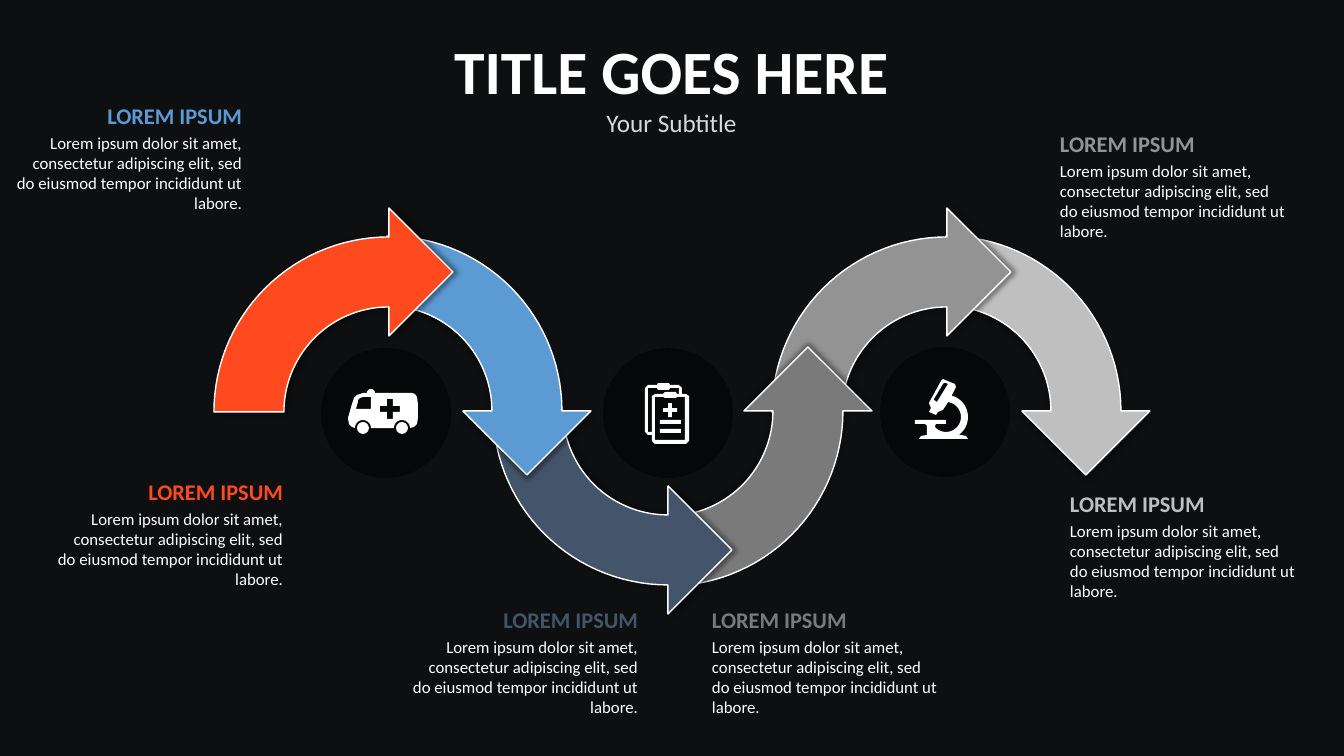
from math import cos, radians, sin

from lxml import etree
from pptx import Presentation, util as u
from pptx.dml import color
from pptx.enum import shapes, text
from pptx.oxml import ns

PX = 12192000 / 1344
BODY = ("Lorem ipsum dolor sit amet, consectetur adipiscing elit, "
        "sed do eiusmod tempor incididunt ut labore.")


def px(n):
    return u.Emu(round(n * PX))


def rgb(code):
    return color.RGBColor.from_string(code)


def arc(x, y, r, a, b, steps=30):
    turns = [radians(a + (b - a) * i / steps) for i in range(steps + 1)]
    return [(x + r * cos(t), y + r * sin(t)) for t in turns]


def cross(x, y, arm, half):
    return [(x - half, y - arm), (x + half, y - arm), (x + half, y - half),
            (x + arm, y - half), (x + arm, y + half), (x + half, y + half),
            (x + half, y + arm), (x - half, y + arm), (x - half, y + half),
            (x - arm, y + half), (x - arm, y - half), (x - half, y - half)]


class Deck:
    """Draws styled elements on the current slide."""

    font = "Calibri"
    white = "FFFFFF"
    dark = "0E0F11"

    def __init__(self):
        self.prs = Presentation()
        self.prs.slide_width, self.prs.slide_height = px(1344), px(756)
        self.page = self.prs.slides.add_slide(self.prs.slide_layouts[6])
        back = self.page.background.fill
        back.solid()
        back.fore_color.rgb = rgb(self.dark)

    def paint(self, shape, fill):
        shape.shadow.inherit = False
        shape.fill.solid()
        shape.fill.fore_color.rgb = rgb(fill)
        shape.line.fill.background()
        return shape

    def block(self, kind, x, y, w, h, fill):
        shape = self.page.shapes.add_shape(kind, px(x), px(y), px(w), px(h))
        return self.paint(shape, fill)

    def disc(self, x, y, r, fill, alpha=100):
        shape = self.block(shapes.MSO_SHAPE.OVAL, x - r, y - r, 2 * r, 2 * r, fill)
        if alpha < 100:
            tint = shape._element.spPr.find(".//" + ns.qn("a:srgbClr"))
            etree.SubElement(tint, ns.qn("a:alpha"), val=str(alpha * 1000))

    def bar(self, x, y, w, h):
        self.block(shapes.MSO_SHAPE.RECTANGLE, x, y, w, h, self.white)

    def outline(self, fill, *loops):
        pen = None
        for loop in loops:
            first, *rest = [(px(x), px(y)) for x, y in loop]
            if pen is None:
                pen = self.page.shapes.build_freeform(*first, scale=1.0)
            else:
                pen.move_to(*first)
            pen.add_line_segments(rest, close=True)
        return self.paint(pen.convert_to_shape(), fill)

    def arrow(self, x, y, start, turn, fill, shade):
        end = start + 90 * turn
        c, s = cos(radians(end)), sin(radians(end))
        tip = (x + 140 * c - 64 * turn * s, y + 140 * s + 64 * turn * c)
        head = [(x + 204 * c, y + 204 * s), tip, (x + 76 * c, y + 76 * s)]
        shape = self.outline(fill, arc(x, y, 175, start, end) + head
                             + arc(x, y, 105, end, start))
        shape.line.color.rgb = rgb(self.white)
        shape.line.width = u.Pt(1)
        glow = etree.SubElement(
            shape._element.spPr.find(ns.qn("a:effectLst")), ns.qn("a:outerShdw"),
            blurRad=str(u.Pt(4)), dist=str(u.Pt(3)), dir=str(shade * 60000),
            algn="ctr", rotWithShape="0")
        tint = etree.SubElement(glow, ns.qn("a:srgbClr"), val="000000")
        etree.SubElement(tint, ns.qn("a:alpha"), val="40000")

    def words(self, x, y, w, h, align, rows, pad=None, gap=0):
        frame = self.page.shapes.add_textbox(px(x), px(y), px(w), px(h)).text_frame
        frame.word_wrap = True
        frame.auto_size = text.MSO_AUTO_SIZE.SHAPE_TO_FIT_TEXT
        if pad:
            frame.margin_left = frame.margin_right = px(pad[0])
            frame.margin_top = frame.margin_bottom = px(pad[1])
        for i, (words, size, fill, bold) in enumerate(rows):
            para = frame.add_paragraph() if i else frame.paragraphs[0]
            para.alignment = align
            if i:
                para.space_before = u.Pt(gap)
            run = para.add_run()
            run.text = words
            run.font.name, run.font.size, run.font.bold = self.font, u.Pt(size), bold
            run.font.color.rgb = rgb(fill)

    def note(self, x, y, align, fill):
        rows = [("LOREM IPSUM", 16, fill, True), (BODY, 12, self.white, False)]
        self.words(x, y, 243, 119, align, rows, (7, 3), 2.4)

    def van(self):
        body = ([(412, 393), (375, 393)] + arc(371, 393, 4, 0, -180)
                + [(363, 393), (357, 395), (354, 398), (352, 404), (348, 418),
                   (349, 424), (352, 427)]
                + arc(363, 428, 8, 180, 360) + arc(402, 428, 8, 180, 360)
                + [(414, 427), (417, 424), (418, 418), (418, 404), (417, 397), (415, 394)])
        pane = [(371, 409), (356, 409), (358, 402), (358, 400), (360, 398),
                (363, 397), (371, 397)]
        self.outline(self.white, body, pane, cross(390, 409, 10, 3))
        for x in (363, 402):
            self.disc(x, 428, 6, self.white)

    def chart(self):
        rim = [(686, 394), (682, 394), (682, 388), (679, 385), (670, 385), (669, 383),
               (658, 383), (657, 385), (648, 385), (645, 388), (645, 432), (648, 435),
               (652, 435), (652, 441), (655, 444), (686, 444), (689, 441), (689, 396)]
        rear = [(652, 396), (652, 432), (648, 432), (648, 388), (657, 388), (658, 390),
                (669, 390), (670, 388), (679, 388), (679, 394), (677, 394), (676, 392),
                (665, 392), (663, 394), (655, 394)]
        front = [(685, 440), (655, 440), (655, 397), (663, 397), (665, 398),
                 (676, 398), (677, 397), (685, 397)]
        self.outline(self.white, rim, rear, front)
        for y in (420, 429):
            self.bar(660, y, 21, 4)
        self.outline(self.white, cross(670, 410, 7, 2))

    def scope(self):
        rim = ([(961, 435)] + arc(946, 417, 22, 54, -75)
               + [(956, 387), (955, 384), (945, 380), (943, 379), (941, 381), (929, 403),
                  (931, 408), (929, 412), (936, 415), (938, 412), (943, 410)]
               + arc(946, 417, 15, -82, 135)
               + [(935, 426), (936, 424), (946, 424), (946, 420), (915, 420), (915, 424),
                  (925, 424), (927, 426), (927, 435), (921, 436), (919, 439),
                  (968, 439), (966, 436)])
        slot = [(948, 384), (937, 402), (934, 400), (934, 399), (943, 384),
                (944, 383), (946, 383)]
        self.outline(self.white, rim, slot)


def main():
    deck = Deck()
    left, mid, right = text.PP_ALIGN.LEFT, text.PP_ALIGN.CENTER, text.PP_ALIGN.RIGHT
    deck.words(368, 28, 607, 115, mid, [("TITLE GOES HERE", 44, deck.white, True),
                                        ("Your Subtitle", 18, "D9D9D9", False)])
    for step in [(946, 411, 270, 1, "BFBFBF", 90), (947, 412, 180, 1, "939393", 0),
                 (668, 411, 90, -1, "7A7A7A", 270), (668, 410, 180, -1, "44546B", 0),
                 (387, 411, 270, 1, "5C9AD3", 90), (389, 412, 180, 1, "FE4A1E", 0)]:
        deck.arrow(*step)
    for note in [(1063, 487, left, "BFBFBF"), (705, 603, left, "7A7A7A"),
                 (402, 603, right, "44546B"), (47, 475, right, "FE4A1E"),
                 (6, 99, right, "5C9AD3"), (1053, 127, left, "939393")]:
        deck.note(*note)
    for x, y in [(668, 413), (386, 413), (945, 412)]:
        deck.disc(x, y, 65, "000000", 50)
    deck.scope()
    deck.van()
    deck.chart()
    deck.prs.save("out.pptx")


if __name__ == "__main__":
    main()
